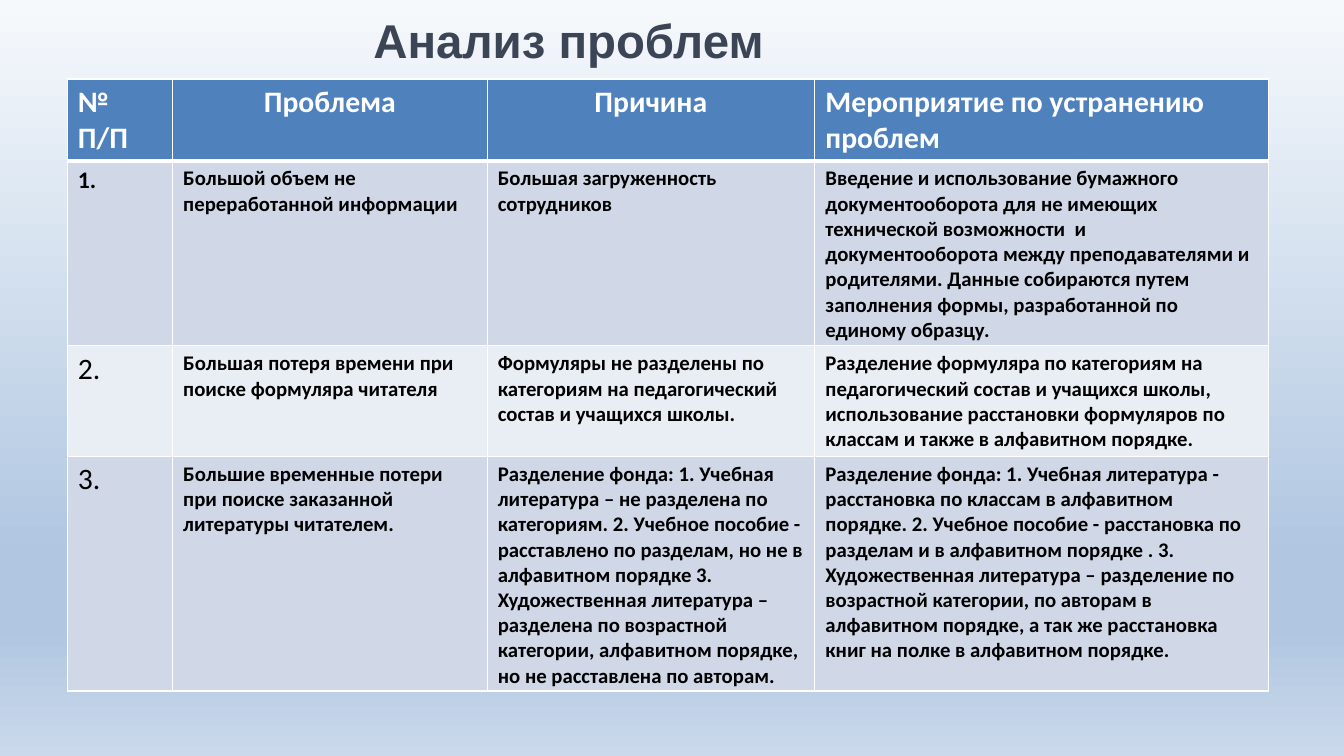
import copy
import pptx
import pptx.util
import pptx.dml.color
import pptx.enum.text
import pptx.oxml
import pptx.oxml.ns

Cm, Pt = pptx.util.Cm, pptx.util.Pt
RGBColor = pptx.dml.color.RGBColor
ALIGN = pptx.enum.text.PP_ALIGN

SLATE = RGBColor(0x3B, 0x45, 0x55)
WHITE = RGBColor(0xFF, 0xFF, 0xFF)
BLACK = RGBColor(0x00, 0x00, 0x00)
BLUE = RGBColor(0x4F, 0x81, 0xBD)
BANDS = (RGBColor(0xD0, 0xD8, 0xE8), RGBColor(0xE9, 0xED, 0xF4))
SKY = (
    (0, RGBColor(0xF6, 0xF9, 0xFC)),
    (0.74, RGBColor(0xB0, 0xC6, 0xE1)),
    (0.83, RGBColor(0xB0, 0xC6, 0xE1)),
    (1, RGBColor(0xCA, 0xD9, 0xEB)),
)

# Text formats
TITLE = dict(name="Arial", size=Pt(32), bold=True, color=SLATE)
HEAD = dict(name="Calibri", size=Pt(20), bold=True, color=WHITE)
BODY = dict(HEAD, size=Pt(14), color=BLACK)
FIRST = dict(BODY, size=Pt(16))
NUMBER = dict(BODY, size=Pt(20), bold=False)

# Table content
WIDTHS = (2.51, 7.49, 7.8, 10.8)
HEIGHTS = (1.9, 4.4, 2.6, 5.55)
ROWS = (
    ("№\nП/П", "Проблема", "Причина", "Мероприятие по устранению проблем"),
    (
        "1.",
        "Большой объем не переработанной информации",
        "Большая загруженность сотрудников",
        "Введение и использование бумажного документооборота для не имеющих "
        "технической возможности  и документооборота между преподавателями и "
        "родителями. Данные собираются путем заполнения формы, разработанной "
        "по единому образцу.",
    ),
    (
        "2.",
        "Большая потеря времени при поиске формуляра читателя",
        "Формуляры не разделены по категориям на педагогический состав и "
        "учащихся школы.",
        "Разделение формуляра по категориям на педагогический состав и "
        "учащихся школы, использование расстановки формуляров по классам и "
        "также в алфавитном порядке.",
    ),
    (
        "3.",
        "Большие временные потери при поиске заказанной литературы читателем.",
        "Разделение фонда: 1. Учебная литература – не разделена по категориям. "
        "2. Учебное пособие - расставлено по разделам, но не в алфавитном "
        "порядке 3. Художественная литература – разделена по возрастной "
        "категории, алфавитном порядке, но не расставлена по авторам.",
        "Разделение фонда: 1. Учебная литература - расстановка по классам в "
        "алфавитном порядке. 2. Учебное пособие - расстановка по разделам и в "
        "алфавитном порядке . 3. Художественная литература – разделение по "
        "возрастной категории, по авторам в алфавитном порядке, а так же "
        "расстановка книг на полке в алфавитном порядке.",
    ),
)


class Page:
    def __init__(self, deck):
        self.slide = deck.slides.add_slide(deck.slide_layouts[5])

    def sky(self, stops):
        fill = self.slide.background.fill
        fill.gradient()
        fill.gradient_angle = 270
        group = self.slide.element.find(".//" + pptx.oxml.ns.qn("a:gsLst"))
        while len(group) < len(stops):
            group.append(copy.deepcopy(group[0]))
        for stop, (place, color) in zip(fill.gradient_stops, stops):
            stop.position = place
            stop.color.rgb = color

    def label(self, frame, text, style, align):
        frame.text = text
        for para in frame.paragraphs:
            para.alignment = align
            for run in para.runs:
                for key, value in style.items():
                    if key == "color":
                        run.font.color.rgb = value
                    else:
                        setattr(run.font, key, value)

    def title(self, text, box):
        shape = self.slide.shapes.title
        for key, value in zip(("left", "top", "width", "height"), box):
            setattr(shape, key, Cm(value))
        frame = shape.text_frame
        frame.word_wrap = False
        frame.auto_size = pptx.enum.text.MSO_AUTO_SIZE.SHAPE_TO_FIT_TEXT
        self.label(frame, text, TITLE, ALIGN.CENTER)

    def edges(self, cell, row):
        thick = {"L": 1, "R": 1, "T": 3 if row == 1 else 1, "B": 3 if row == 0 else 1}
        props = cell._tc.get_or_add_tcPr()
        for spot, (side, width) in enumerate(thick.items()):
            line = pptx.oxml.parse_xml(
                f'<a:ln{side} {pptx.oxml.ns.nsdecls("a")} w="{Pt(width)}">'
                f'<a:solidFill><a:srgbClr val="{WHITE}"/></a:solidFill></a:ln{side}>'
            )
            props.insert(spot, line)

    def table(self, rows, left, top):
        size = Cm(sum(WIDTHS)), Cm(sum(HEIGHTS))
        grid = self.slide.shapes.add_table(
            len(rows), len(WIDTHS), Cm(left), Cm(top), *size
        ).table
        for col, width in zip(grid.columns, WIDTHS):
            col.width = Cm(width)
        for row, height in zip(grid.rows, HEIGHTS):
            row.height = Cm(height)
        for r, texts in enumerate(rows):
            for c, text in enumerate(texts):
                cell = grid.cell(r, c)
                style = BODY
                if r == 0:
                    style = HEAD
                elif c == 0:
                    style = FIRST if r == 1 else NUMBER
                mid = r == 0 and c in (1, 2)
                self.label(cell.text_frame, text, style,
                           ALIGN.CENTER if mid else ALIGN.LEFT)
                cell.fill.solid()
                cell.fill.fore_color.rgb = BANDS[(r - 1) % 2] if r else BLUE
                self.edges(cell, r)


def main():
    deck = pptx.Presentation()
    deck.slide_width, deck.slide_height = Cm(32), Cm(18)
    page = Page(deck)
    # Background and title
    page.sky(SKY)
    page.title("Анализ проблем", (8.56, 0.13, 9.96, 1.63))
    # Problem table
    page.table(ROWS, 1.6, 1.88)
    deck.save("out.pptx")


if __name__ == "__main__":
    main()
